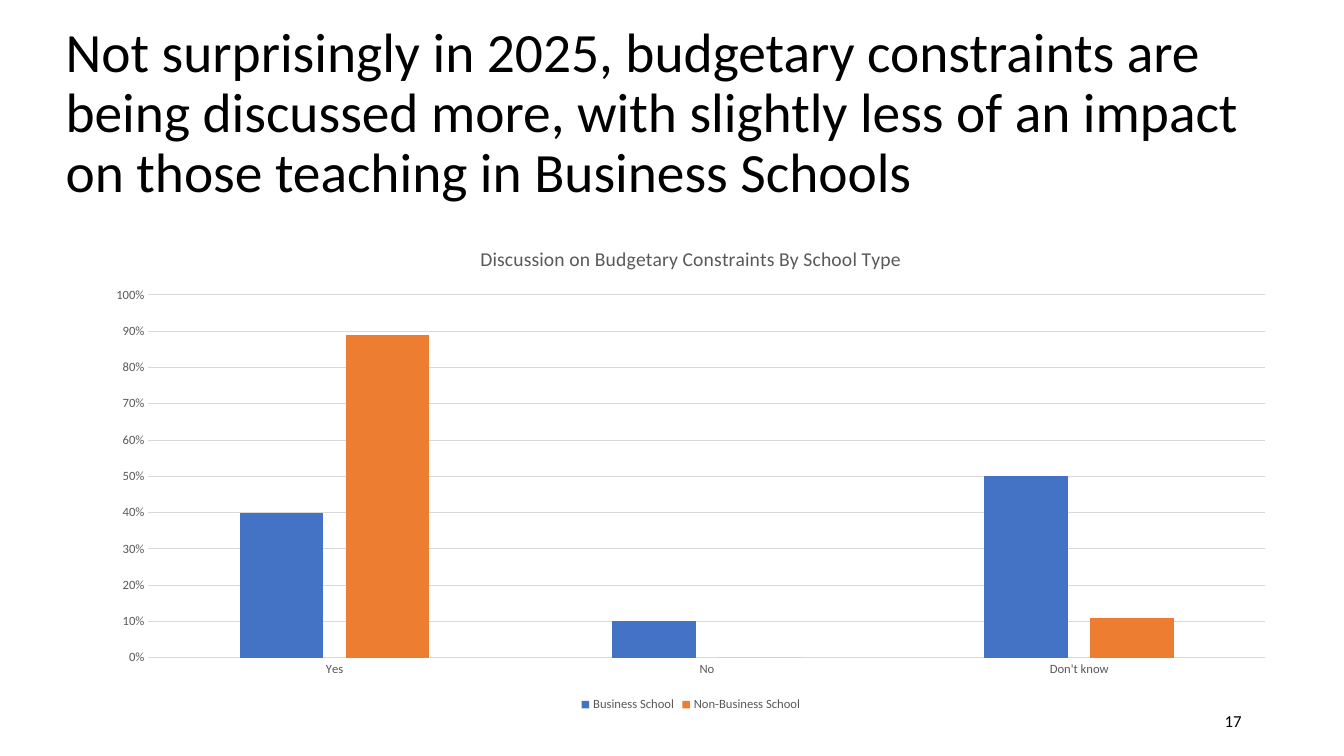
from pptx import Presentation
from pptx.chart.data import CategoryChartData
from pptx.dml.color import RGBColor
from pptx.enum.chart import XL_CHART_TYPE as ChartType, XL_LEGEND_POSITION as LegendSide, XL_TICK_MARK as Tick
from pptx.enum.text import MSO_ANCHOR as Anchor, PP_ALIGN as Align
from pptx.util import Pt

EMU_PER_PX = 9525


def px(length):
    return length * EMU_PER_PX


def color(value):
    return RGBColor.from_string(value)


class SlideBuilder:
    face = "Calibri"
    ink = "000000"
    muted = "595959"
    rule = "D9D9D9"

    def __init__(self, deck):
        self.page = deck.slides.add_slide(deck.slide_layouts[6])

    def font(self, font, size, shade):
        font.name = self.face
        font.size = Pt(size)
        font.bold = False
        font.color.rgb = color(shade)

    def line(self, line):
        line.color.rgb = color(self.rule)
        line.width = Pt(0.75)

    def text(self, left, top, width, height, words, size, align=Align.LEFT, spacing=1.0):
        box = self.page.shapes.add_textbox(px(left), px(top), px(width), px(height))
        frame = box.text_frame
        frame.word_wrap = True
        frame.vertical_anchor = Anchor.MIDDLE
        frame.text = words
        para = frame.paragraphs[0]
        para.alignment = align
        para.line_spacing = spacing
        for span in para.runs:
            self.font(span.font, size, self.ink)

    def axis(self, axis):
        axis.major_tick_mark = Tick.NONE
        axis.minor_tick_mark = Tick.NONE
        self.font(axis.tick_labels.font, 9, self.muted)

    def column_chart(self, left, top, width, height, title, categories, series):
        data = CategoryChartData(number_format="0%")
        data.categories = categories
        for name, values, _ in series:
            data.add_series(name, values)
        chart = self.page.shapes.add_chart(
            ChartType.COLUMN_CLUSTERED, px(left), px(top), px(width), px(height), data
        ).chart
        self.font(chart.font, 10, self.ink)

        chart.has_title = True
        chart.chart_title.include_in_layout = False
        para = chart.chart_title.text_frame.paragraphs[0]
        para.text = title
        self.font(para.runs[0].font, 14, self.muted)

        chart.has_legend = True
        chart.legend.position = LegendSide.BOTTOM
        chart.legend.include_in_layout = False
        self.font(chart.legend.font, 9, self.muted)

        self.axis(chart.category_axis)
        self.line(chart.category_axis.format.line)

        value_axis = chart.value_axis
        self.axis(value_axis)
        value_axis.format.line.fill.background()
        value_axis.minimum_scale = 0
        value_axis.maximum_scale = 1
        value_axis.major_unit = 0.1
        value_axis.tick_labels.number_format = "0%"
        value_axis.tick_labels.number_format_is_linked = False
        value_axis.has_major_gridlines = True
        self.line(value_axis.major_gridlines.format.line)

        plot = chart.plots[0]
        plot.vary_by_categories = False
        plot.gap_width = 219
        plot.overlap = -27
        for bars, (_, _, shade) in zip(plot.series, series):
            bars.invert_if_negative = False
            bars.format.fill.solid()
            bars.format.fill.fore_color.rgb = color(shade)


def main():
    deck = Presentation()
    deck.slide_width = px(1280)
    deck.slide_height = px(720)
    builder = SlideBuilder(deck)
    builder.text(
        53, 38, 1193, 142,
        "Not surprisingly in 2025, budgetary constraints are being discussed more, "
        "with slightly less of an impact on those teaching in Business Schools",
        39.6, spacing=0.9,
    )
    builder.column_chart(
        88, 216, 1140, 466,
        "Discussion on Budgetary Constraints By School Type",
        ["Yes", "No", "Don't know"],
        [
            ("Business School", (0.4, 0.1, 0.5), "4472C4"),
            ("Non-Business School", (0.89, 0, 0.11), "ED7D31"),
        ],
    )
    builder.text(904, 667, 288, 38, "17", 12, align=Align.RIGHT)
    deck.save("out.pptx")


if __name__ == "__main__":
    main()
